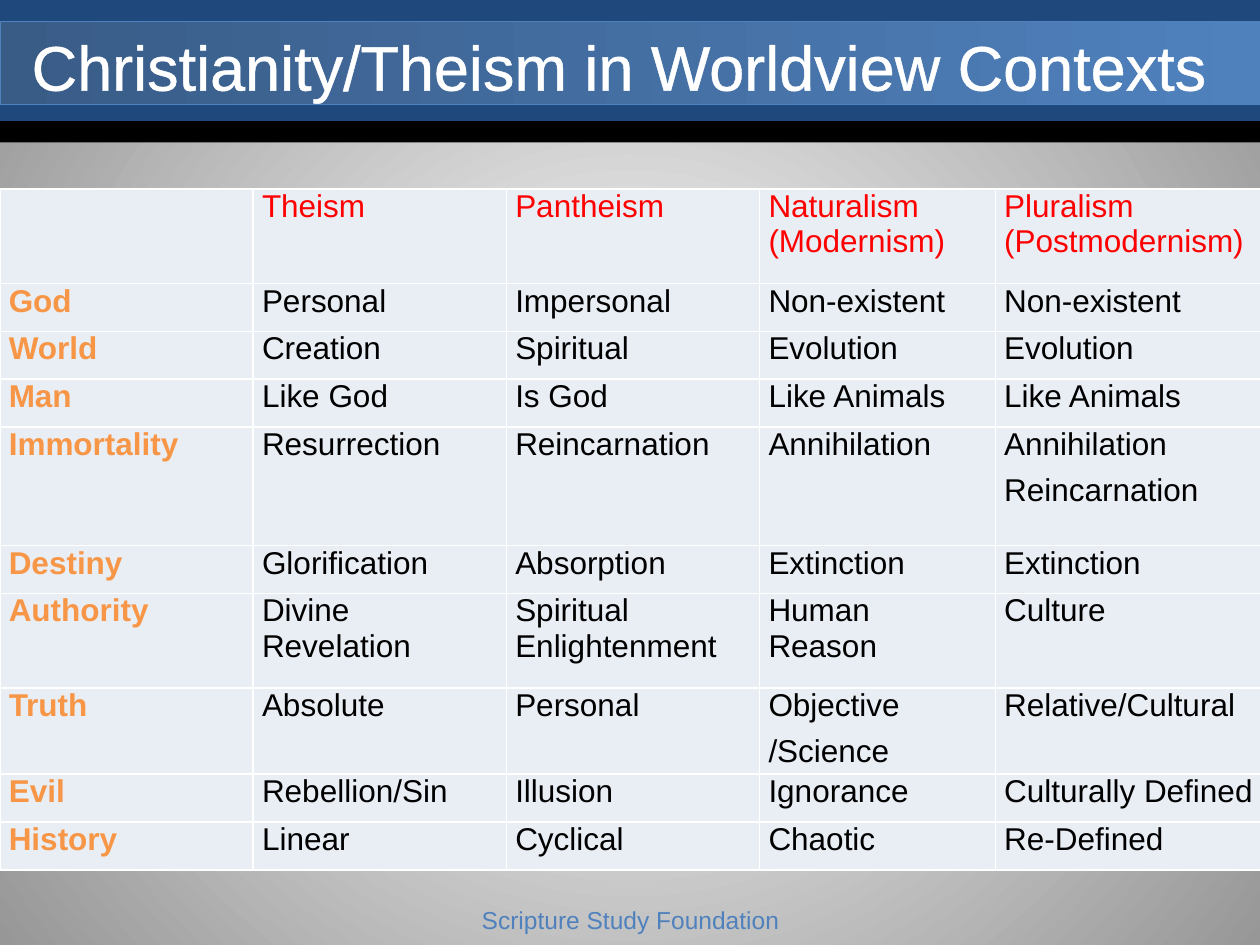
from lxml import etree
from pptx import Presentation
from pptx.dml.color import RGBColor
from pptx.enum.shapes import MSO_SHAPE
from pptx.enum.text import MSO_ANCHOR, PP_ALIGN
from pptx.oxml import parse_xml
from pptx.oxml.ns import nsdecls, qn
from pptx.util import Inches, Pt

RECT = MSO_SHAPE.RECTANGLE
CENTER = PP_ALIGN.CENTER
MIDDLE = MSO_ANCHOR.MIDDLE

WHITE = RGBColor(0xFF, 0xFF, 0xFF)
BLACK = RGBColor(0, 0, 0)
GRAY = RGBColor(0x97, 0x97, 0x97)
NAVY = RGBColor(0x1F, 0x49, 0x7D)
DUSK = RGBColor(0x39, 0x5C, 0x87)
BLUE = RGBColor(0x4F, 0x81, 0xBD)
PALE = RGBColor(0xE9, 0xED, 0xF4)
RED = RGBColor(0xFF, 0, 0)
ORANGE = RGBColor(0xF7, 0x96, 0x46)

ROWS = [
    ["", "Theism", "Pantheism", "Naturalism (Modernism)", "Pluralism (Postmodernism)"],
    ["God", "Personal", "Impersonal", "Non-existent", "Non-existent"],
    ["World", "Creation", "Spiritual", "Evolution", "Evolution"],
    ["Man", "Like God", "Is God", "Like Animals", "Like Animals"],
    ["Immortality", "Resurrection", "Reincarnation", "Annihilation",
     "Annihilation\nReincarnation"],
    ["Destiny", "Glorification", "Absorption", "Extinction", "Extinction"],
    ["Authority", "Divine Revelation", "Spiritual Enlightenment", "Human Reason", "Culture"],
    ["Truth", "Absolute", "Personal", "Objective\n/Science", "Relative/Cultural"],
    ["Evil", "Rebellion/Sin", "Illusion", "Ignorance", "Culturally Defined"],
    ["History", "Linear", "Cyclical", "Chaotic", "Re-Defined"],
]
WIDTHS = [2.01, 2.01, 2.01, 1.87, 2.17]
HEIGHTS = [0.75, 0.38, 0.38, 0.38, 0.94, 0.38, 0.75, 0.64, 0.38, 0.38]


def shade(fill, first, last):
    """Give a fill a two-stop gradient."""
    fill.gradient()
    for stop, color, place in zip(fill.gradient_stops, (first, last), (0, 1)):
        stop.color.rgb = color
        stop.position = place


def style(para, size, color, bold=False):
    para.font.name = "Arial"
    para.font.size = Pt(size)
    para.font.color.rgb = color
    para.font.bold = bold


deck = Presentation()
deck.slide_width, deck.slide_height = Inches(10), Inches(7.5)
slide = deck.slides.add_slide(deck.slide_layouts[6])

# Background: light centre, gray corners
shade(slide.background.fill, WHITE, GRAY)
grad = next(slide.element.iter(qn("a:gradFill")))
grad.replace(grad.find(qn("a:lin")), parse_xml(
    f'<a:path {nsdecls("a")} path="circle">'
    '<a:fillToRect l="50000" t="50000" r="50000" b="50000"/></a:path>'))

# Header bands
for top, height, color in [(0.01, 1.12, BLACK), (0, 0.96, NAVY), (0.17, 0.66, None)]:
    band = slide.shapes.add_shape(RECT, 0, Inches(top), Inches(10), Inches(height))
    band.shadow.inherit = False
    if color is not None:
        band.fill.solid()
        band.fill.fore_color.rgb = color
        band.line.fill.background()
    else:
        shade(band.fill, DUSK, BLUE)
        band.fill.gradient_angle = 0
        band.line.color.rgb = BLUE
        band.line.width = Pt(0.75)

# Title and footer
for text, box, size, color in [
    ("Christianity/Theism in Worldview Contexts", (0, 0.17, 9.83, 0.7), 36, WHITE),
    ("Scripture Study Foundation", (3.42, 7.13, 3.17, 0.34), 14, BLUE),
]:
    label = slide.shapes.add_textbox(*map(Inches, box))
    frame = label.text_frame
    frame.word_wrap = True
    frame.vertical_anchor = MIDDLE
    para = frame.paragraphs[0]
    para.text = text
    para.alignment = CENTER
    style(para, size, color)
    if color == WHITE:
        props = para.runs[0].font
        props.size = Pt(size)
        edge = parse_xml(f'<a:ln {nsdecls("a")} w="18415"><a:solidFill>'
                         f'<a:srgbClr val="{WHITE}"/></a:solidFill></a:ln>')
        para.runs[0]._r.get_or_add_rPr().insert(0, edge)

# Worldview table
table = slide.shapes.add_table(
    len(ROWS), len(WIDTHS), 0, Inches(1.5),
    Inches(sum(WIDTHS)), Inches(sum(HEIGHTS))).table
for col, width in zip(table.columns, WIDTHS):
    col.width = Inches(width)
for row, height in zip(table.rows, HEIGHTS):
    row.height = Inches(height)

for r, words in enumerate(ROWS):
    for c, text in enumerate(words):
        cell = table.cell(r, c)
        cell.margin_left = cell.margin_right = Inches(0.07)
        cell.margin_top = cell.margin_bottom = 0
        cell.text = text
        color = RED if r == 0 else ORANGE if c == 0 else BLACK
        for para in cell.text_frame.paragraphs:
            para.space_after = Pt(6)
            style(para, 18, color, bold=c == 0)
        props = cell._tc.get_or_add_tcPr()
        for side in ("lnL", "lnR", "lnT", "lnB"):
            edge = etree.SubElement(props, qn(f"a:{side}"), w="12700")
            paint = etree.SubElement(edge, qn("a:solidFill"))
            etree.SubElement(paint, qn("a:srgbClr"), val=str(WHITE))
        cell.fill.solid()
        cell.fill.fore_color.rgb = PALE

deck.save("out.pptx")
